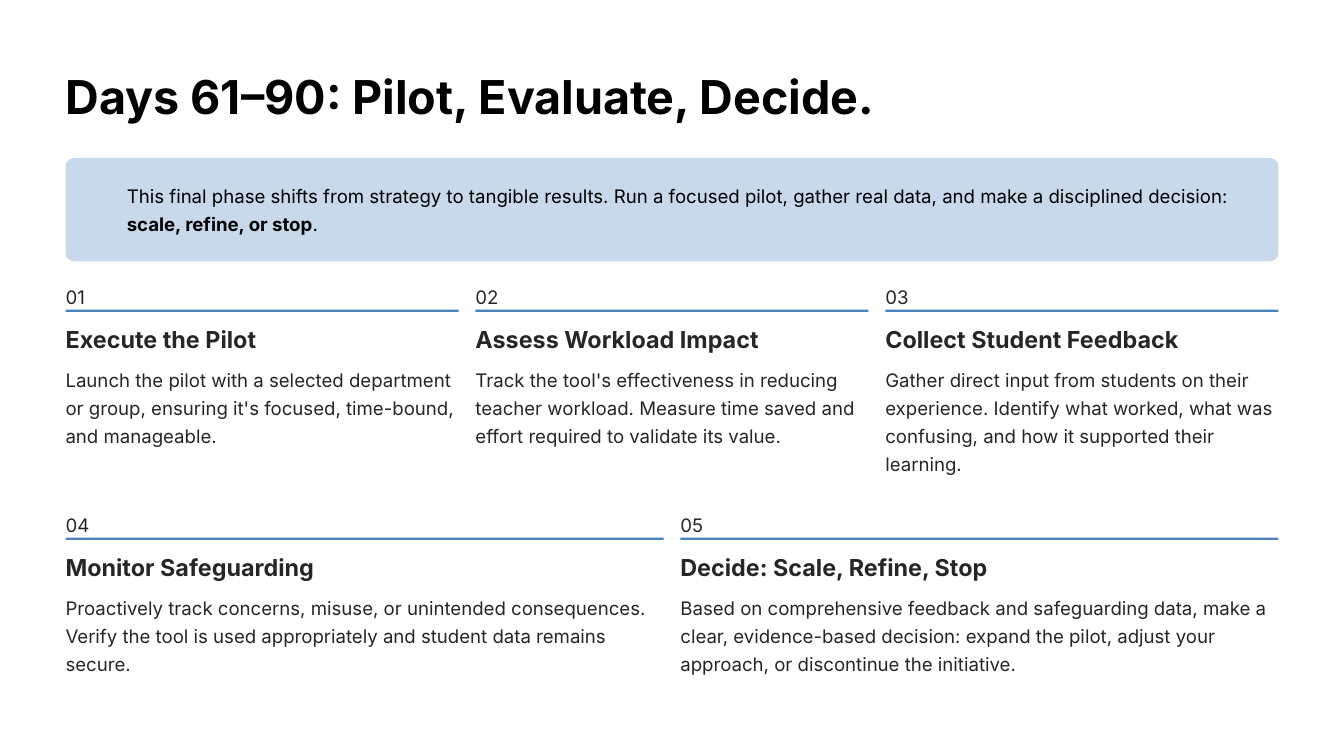
"""Build the slide on the pilot, evaluate and decide phase."""
from pptx import Presentation
from pptx.dml.color import RGBColor
from pptx.enum import shapes
from pptx.util import Pt

TITLE = "Days 61–90: Pilot, Evaluate, Decide."
SUMMARY = [
    ("This final phase shifts from strategy to tangible results. Run a focused pilot, "
     "gather real data, and make a disciplined decision: ", False),
    ("scale, refine, or stop", True),
    (".", False),
]
ROWS = [
    (239.8, [
        ("Execute the Pilot", 201,
         "Launch the pilot with a selected department or group, ensuring it's focused, "
         "time-bound, and manageable.", 3),
        ("Assess Workload Impact", 243.4,
         "Track the tool's effectiveness in reducing teacher workload. Measure time saved "
         "and effort required to validate its value.", 3),
        ("Collect Student Feedback", 252,
         "Gather direct input from students on their experience. Identify what worked, what "
         "was confusing, and how it supported their learning.", 4),
    ]),
    (435.2, [
        ("Monitor Safeguarding", 213.8,
         "Proactively track concerns, misuse, or unintended consequences. Verify the tool is "
         "used appropriately and student data remains secure.", 3),
        ("Decide: Scale, Refine, Stop", 264.2,
         "Based on comprehensive feedback and safeguarding data, make a clear, evidence-based "
         "decision: expand the pilot, adjust your approach, or discontinue the initiative.", 3),
    ]),
]

FONT = "Inter"
WHITE = RGBColor(0xFF, 0xFF, 0xFF)
BLACK = RGBColor(0x00, 0x00, 0x00)
INK = RGBColor(0x27, 0x25, 0x25)
PALE_BLUE = RGBColor(0xC7, 0xD9, 0xEA)
BLUE = RGBColor(0x49, 0x82, 0xBC)

LEFT, CONTENT_WIDTH, GAP = 56.2, 1039.6, 14.4
RULE_DROP, HEADING_DROP, BODY_DROP = 25.6, 37.6, 71.2
NUMBER_WIDTH, BODY_LINE = 24, 24.5


def add_text(page, left, top, width, height, spans, size, leading, color):
    box = page.shapes.add_textbox(Pt(left), Pt(top), Pt(width), Pt(height))
    frame = box.text_frame
    frame.margin_left = frame.margin_right = frame.margin_top = frame.margin_bottom = 0
    frame.word_wrap = True
    para = frame.paragraphs[0]
    para.line_spacing = Pt(leading)
    for words, bold in spans:
        span = para.add_run()
        span.text = words
        span.font.name = FONT
        span.font.size = Pt(size)
        span.font.bold = bold
        span.font.color.rgb = color


def add_block(page, kind, left, top, width, height, color):
    block = page.shapes.add_shape(kind, Pt(left), Pt(top), Pt(width), Pt(height))
    block.shadow.inherit = False
    block.fill.solid()
    block.fill.fore_color.rgb = color
    block.line.fill.background()
    return block


def add_step(page, left, top, width, number, step):
    heading, heading_width, body, lines = step
    add_text(page, left, top, NUMBER_WIDTH, 20.2, [(f"{number:02d}", False)], 16, 24, INK)
    add_block(page, shapes.MSO_SHAPE.RECTANGLE, left, top + RULE_DROP, width, 2, BLUE)
    add_text(page, left, top + HEADING_DROP, heading_width, 25.2, [(heading, True)], 20, 25, INK)
    add_text(page, left, top + BODY_DROP, width, lines * BODY_LINE, [(body, False)], 16, 24, INK)


def main():
    deck = Presentation()
    deck.slide_width, deck.slide_height = Pt(1152), Pt(648)
    page = deck.slides.add_slide(deck.slide_layouts[6])
    page.background.fill.solid()
    page.background.fill.fore_color.rgb = WHITE

    add_text(page, LEFT, 56.2, 697.7, 50.4, [(TITLE, True)], 40, 50, BLACK)
    panel = add_block(page, shapes.MSO_SHAPE.ROUNDED_RECTANGLE,
                      LEFT, 135.4, CONTENT_WIDTH, 88.6, PALE_BLUE)
    panel.adjustments[0] = 0.08
    add_text(page, 108.7, 153.7, 971.3, 49, SUMMARY, 16, 24, BLACK)

    number = 0
    for top, steps in ROWS:
        width = (CONTENT_WIDTH - GAP * (len(steps) - 1)) / len(steps)
        for column, step in enumerate(steps):
            number += 1
            add_step(page, LEFT + column * (width + GAP), top, width, number, step)

    deck.save("out.pptx")


if __name__ == "__main__":
    main()
